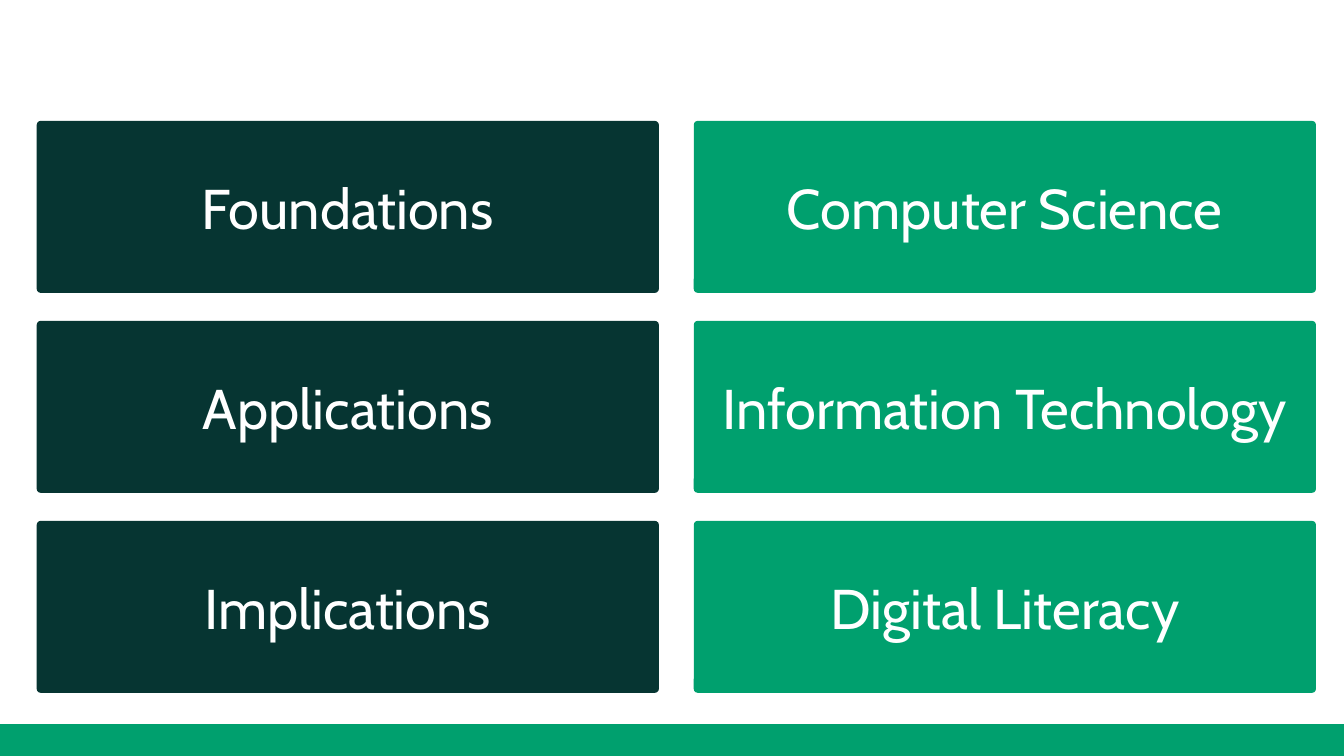
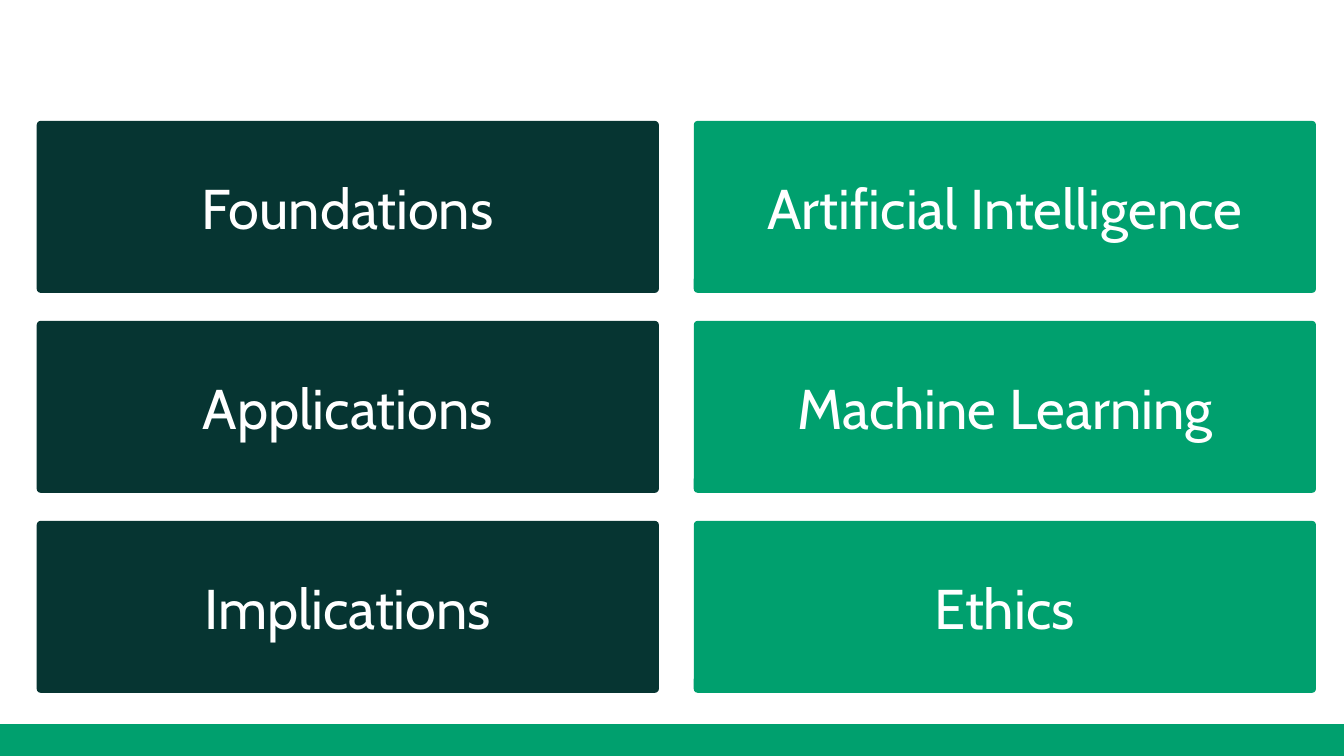
from pptx import Presentation
from pptx.dml.color import RGBColor
from pptx.enum.shapes import MSO_SHAPE
from pptx.enum.text import MSO_ANCHOR, PP_ALIGN
from pptx.util import Pt

RECTANGLE = MSO_SHAPE.RECTANGLE
ROUNDED = MSO_SHAPE.ROUNDED_RECTANGLE
MIDDLE = MSO_ANCHOR.MIDDLE
CENTER = PP_ALIGN.CENTER

WIDTH, HEIGHT = 720, 405
BLANK_LAYOUT = 6
FONT = "Cabin"
WHITE, GREEN, DARK = "FFFFFF", "00A06E", "063532"

FOOTER_BOX = (0, 388, WIDTH, 17)
GRID_BOX = (19.7, 64.8, 685.3, 306.4)
COLUMN_GAP, ROW_GAP = 18.7, 15
CARD_INSET = 3
CORNER = 0.023

STRANDS = ["Foundations", "Applications", "Implications"]
SLIDE_TOPICS = [
    ["Computer Science", "Information Technology", "Digital Literacy"],
    ["Artificial Intelligence", "Machine Learning", "Ethics"],
]


def color(hex_string):
    """Return the colour for a hex string."""
    return RGBColor.from_string(hex_string)


def add_block(slide, kind, box, fill, line=None):
    """Add a flat filled shape, outlined only when a line colour is given."""
    shape = slide.shapes.add_shape(kind, *(Pt(length) for length in box))
    shape.shadow.inherit = False
    shape.fill.solid()
    shape.fill.fore_color.rgb = color(fill)
    if line:
        shape.line.color.rgb = color(line)
        shape.line.width = Pt(0.75)
    else:
        shape.line.fill.background()
    return shape


def write_text(shape, text, size=30, font=FONT, ink=WHITE, align=CENTER, anchor=MIDDLE, inset=CARD_INSET):
    """Write one formatted paragraph into a shape."""
    frame = shape.text_frame
    frame.word_wrap = True
    frame.vertical_anchor = anchor
    frame.margin_left = frame.margin_right = Pt(inset)
    frame.margin_top = frame.margin_bottom = Pt(inset)
    paragraph = frame.paragraphs[0]
    paragraph.alignment = align
    run = paragraph.add_run()
    run.text = text
    run.font.size = Pt(size)
    run.font.name = font
    run.font.color.rgb = color(ink)


def add_card_column(slide, box, labels, fill):
    """Stack equal cards from top to bottom of the box."""
    left, top, width, height = box
    card_height = (height - ROW_GAP * (len(labels) - 1)) / len(labels)
    for row, label in enumerate(labels):
        card_top = top + row * (card_height + ROW_GAP)
        card = add_block(slide, ROUNDED, (left, card_top, width, card_height), fill)
        card.adjustments[0] = CORNER
        write_text(card, label)


def add_card_grid(slide, box, columns):
    """Split the box into equal columns of cards."""
    left, top, width, height = box
    column_width = (width - COLUMN_GAP * (len(columns) - 1)) / len(columns)
    for index, (labels, fill) in enumerate(columns):
        column_left = left + index * (column_width + COLUMN_GAP)
        add_card_column(slide, (column_left, top, column_width, height), labels, fill)


def add_topic_slide(presentation, topics):
    """Add a slide that sets the strands beside their topics."""
    slide = presentation.slides.add_slide(presentation.slide_layouts[BLANK_LAYOUT])
    slide.background.fill.solid()
    slide.background.fill.fore_color.rgb = color(WHITE)
    add_block(slide, RECTANGLE, FOOTER_BOX, GREEN, line=GREEN)
    add_card_grid(slide, GRID_BOX, [(STRANDS, DARK), (topics, GREEN)])


def main():
    """Build and save the presentation."""
    presentation = Presentation()
    presentation.slide_width = Pt(WIDTH)
    presentation.slide_height = Pt(HEIGHT)
    for topics in SLIDE_TOPICS:
        add_topic_slide(presentation, topics)
    presentation.save("out.pptx")


if __name__ == "__main__":
    main()
